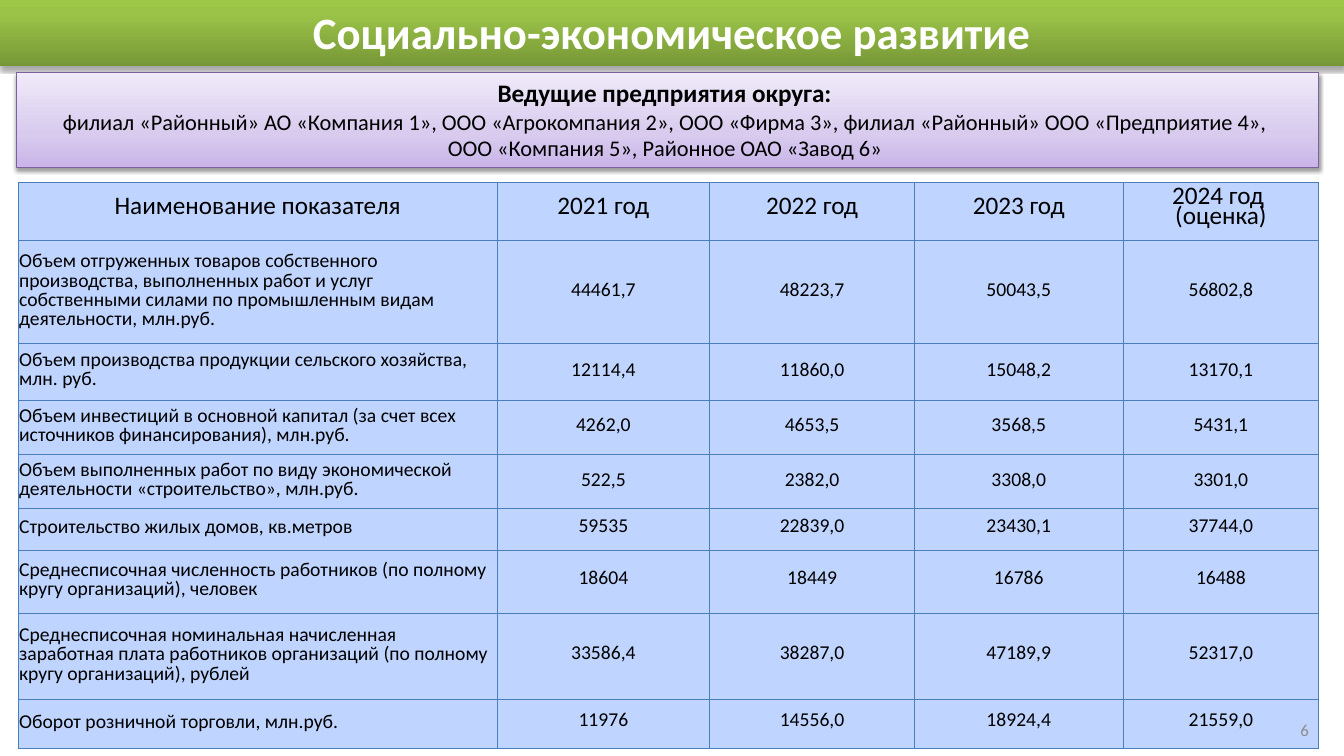
from dataclasses import dataclass
from itertools import product

from lxml.etree import SubElement as Sub
from pptx import Presentation
from pptx.dml.color import RGBColor as Rgb
from pptx.enum.shapes import MSO_SHAPE as Preset
from pptx.enum.text import MSO_ANCHOR as Anchor, PP_ALIGN as Align
from pptx.oxml.ns import qn
from pptx.util import Inches, Length, Pt

GRID_COLUMNS, GRID_ROWS = 1333, 750
SLIDE_WIDTH, SLIDE_HEIGHT = Inches(13.33), Inches(7.5)
COLORS = {
    "white": "FFFFFF", "black": "000000", "number": "8C8C8C",
    "cell": "BFD4FF", "cell_line": "4B7EBC", "panel_line": "7D60A0",
    "green_low": "779737", "green_mid": "9BC348", "green_high": "9DC746",
    "violet_low": "C9B5E8", "violet_mid": "D8CBEE", "violet_high": "F0EAF9",
}
COLUMN_WIDTHS = (475, 211, 203, 207, 194)
HEADER = ("Наименование показателя", "2021 год", "2022 год", "2023 год", "2024 год \v(оценка)")


@dataclass(frozen=True)
class Box:
    column: int
    row: int
    columns: int
    rows: int

    def place(self) -> tuple[Length, Length, Length, Length]:
        return across(self.column), down(self.row), across(self.columns), down(self.rows)


@dataclass(frozen=True)
class Line:
    text: str
    size: int
    bold: bool = False


@dataclass(frozen=True)
class Panel:
    box: Box
    stops: tuple[tuple[int, str], ...]
    lines: tuple[Line, ...]
    text_color: str
    shadow_alpha: int
    shadow_distance: float
    outline: str | None = None


@dataclass(frozen=True)
class Indicator:
    rows: int
    name: str
    values: tuple[str, ...]
    value_spacing: float = 13.7


PANELS = (
    Panel(
        Box(0, 0, 1333, 66),
        ((0, "green_low"), (80, "green_mid"), (100, "green_high")),
        (Line("Социально-экономическое развитие", 32, True),),
        "white", 35, 1.8,
    ),
    Panel(
        Box(16, 72, 1292, 94),
        ((0, "violet_low"), (35, "violet_mid"), (100, "violet_high")),
        (
            Line("Ведущие предприятия округа: ", 18, True),
            Line("филиал «Районный» АО «Компания 1», ООО «Агрокомпания 2», "
                 "ООО «Фирма 3», филиал «Районный» ООО «Предприятие 4», ", 16),
            Line("ООО «Компания 5», Районное ОАО «Завод 6» ", 16),
        ),
        "black", 38, 1.6, "panel_line",
    ),
)

INDICATORS = (
    Indicator(102, "Объем отгруженных товаров собственного производства, выполненных работ и услуг "
              "собственными силами по промышленным видам деятельности, млн.руб.",
              ("44461,7", "48223,7", "50043,5", "56802,8")),
    Indicator(56, "Объем производства продукции сельского хозяйства, млн. руб.",
              ("12114,4", "11860,0", "15048,2", "13170,1")),
    Indicator(54, "Объем инвестиций в основной капитал (за счет всех источников финансирования), млн.руб.",
              ("4262,0", "4653,5", "3568,5", "5431,1")),
    Indicator(54, "Объем выполненных работ по виду экономической деятельности «строительство», млн.руб.",
              ("522,5", "2382,0", "3308,0", "3301,0")),
    Indicator(41, "Строительство жилых домов, кв.метров",
              ("59535", "22839,0", "23430,1", "37744,0"), 11),
    Indicator(63, "Среднесписочная численность работников (по полному кругу организаций), человек",
              ("18604", "18449", "16786", "16488"), 11),
    Indicator(85, "Среднесписочная номинальная начисленная заработная плата работников организаций "
              "(по полному кругу организаций), рублей",
              ("33586,4", "38287,0", "47189,9", "52317,0"), 11),
    Indicator(49, "Оборот розничной торговли, млн.руб.",
              ("11976", "14556,0", "18924,4", "21559,0"), 11),
)


def across(columns: int) -> Length:
    return Length(SLIDE_WIDTH * columns // GRID_COLUMNS)


def down(rows: int) -> Length:
    return Length(SLIDE_HEIGHT * rows // GRID_ROWS)


def rgb(name: str) -> Rgb:
    return Rgb.from_string(COLORS[name])


def write(paragraph, text: str, *, size: float, color: str = "black", bold: bool = False,
          align: Align = Align.CENTER, spacing: float | None = None) -> None:
    paragraph.text = text
    paragraph.alignment = align
    if spacing:
        paragraph.line_spacing = Pt(spacing)
    for run in paragraph.runs:
        run.font.name = "Calibri"
        run.font.size = Pt(size)
        run.font.bold = bold
        run.font.color.rgb = rgb(color)


def add_color(parent, name: str):
    return Sub(parent, qn("a:srgbClr"), val=COLORS[name])


def paint_gradient(shape, stops: tuple[tuple[int, str], ...]) -> None:
    shape.fill.gradient()
    shape.fill.gradient_angle = 90
    stop_list = shape._element.spPr.find(qn("a:gradFill")).find(qn("a:gsLst"))
    for old in list(stop_list):
        stop_list.remove(old)
    for position, name in stops:
        add_color(Sub(stop_list, qn("a:gs"), pos=str(position * 1000)), name)


def cast_shadow(shape, alpha: int, distance: float) -> None:
    shape.shadow.inherit = False
    effects = shape._element.spPr.find(qn("a:effectLst"))
    shadow = Sub(effects, qn("a:outerShdw"), blurRad=str(Pt(3.1)), dist=str(Pt(distance)),
                 dir="5400000", rotWithShape="0")
    Sub(add_color(shadow, "black"), qn("a:alpha"), val=str(alpha * 1000))


def draw_panel(slide, panel: Panel) -> None:
    shape = slide.shapes.add_shape(Preset.RECTANGLE, *panel.box.place())
    paint_gradient(shape, panel.stops)
    if panel.outline:
        shape.line.color.rgb = rgb(panel.outline)
        shape.line.width = Pt(0.75)
    else:
        shape.line.fill.background()
    cast_shadow(shape, panel.shadow_alpha, panel.shadow_distance)
    frame = shape.text_frame
    frame.word_wrap = True
    frame.vertical_anchor = Anchor.TOP
    for index, line in enumerate(panel.lines):
        paragraph = frame.add_paragraph() if index else frame.paragraphs[0]
        write(paragraph, line.text, size=line.size, color=panel.text_color, bold=line.bold)


def style_cell(cell) -> None:
    cell.vertical_anchor = Anchor.MIDDLE
    cell.margin_left = cell.margin_right = Inches(0.01)
    cell.margin_top = cell.margin_bottom = 0
    properties = cell._tc.get_or_add_tcPr()
    for side in ("lnL", "lnR", "lnT", "lnB"):
        border = Sub(properties, qn(f"a:{side}"), w=str(Pt(0.75)))
        add_color(Sub(border, qn("a:solidFill")), "cell_line")
    cell.fill.solid()
    cell.fill.fore_color.rgb = rgb("cell")


def draw_indicators(slide) -> None:
    heights = (58, *(indicator.rows for indicator in INDICATORS))
    box = Box(18, 181, sum(COLUMN_WIDTHS), sum(heights))
    table = slide.shapes.add_table(len(heights), len(COLUMN_WIDTHS), *box.place()).table
    table.first_row = table.horz_banding = False
    for column, width in zip(table.columns, COLUMN_WIDTHS):
        column.width = across(width)
    for row, height in zip(table.rows, heights):
        row.height = down(height)
    for row, column in product(range(len(heights)), range(len(COLUMN_WIDTHS))):
        cell = table.cell(row, column)
        style_cell(cell)
        paragraph = cell.text_frame.paragraphs[0]
        if row == 0:
            write(paragraph, HEADER[column], size=18, spacing=13.7)
            continue
        indicator = INDICATORS[row - 1]
        if column == 0:
            write(paragraph, indicator.name, size=14, align=Align.LEFT, spacing=13.7)
        else:
            write(paragraph, indicator.values[column - 1], size=14, spacing=indicator.value_spacing)


def draw_page_number(slide) -> None:
    frame = slide.shapes.add_textbox(*Box(997, 704, 311, 40).place()).text_frame
    frame.word_wrap = True
    frame.vertical_anchor = Anchor.MIDDLE
    write(frame.paragraphs[0], "6", size=12, color="number", align=Align.RIGHT)


def main() -> None:
    deck = Presentation()
    deck.slide_width, deck.slide_height = SLIDE_WIDTH, SLIDE_HEIGHT
    slide = deck.slides.add_slide(deck.slide_layouts[6])
    for panel in PANELS:
        draw_panel(slide, panel)
    draw_indicators(slide)
    draw_page_number(slide)
    deck.save("out.pptx")


if __name__ == "__main__":
    main()
